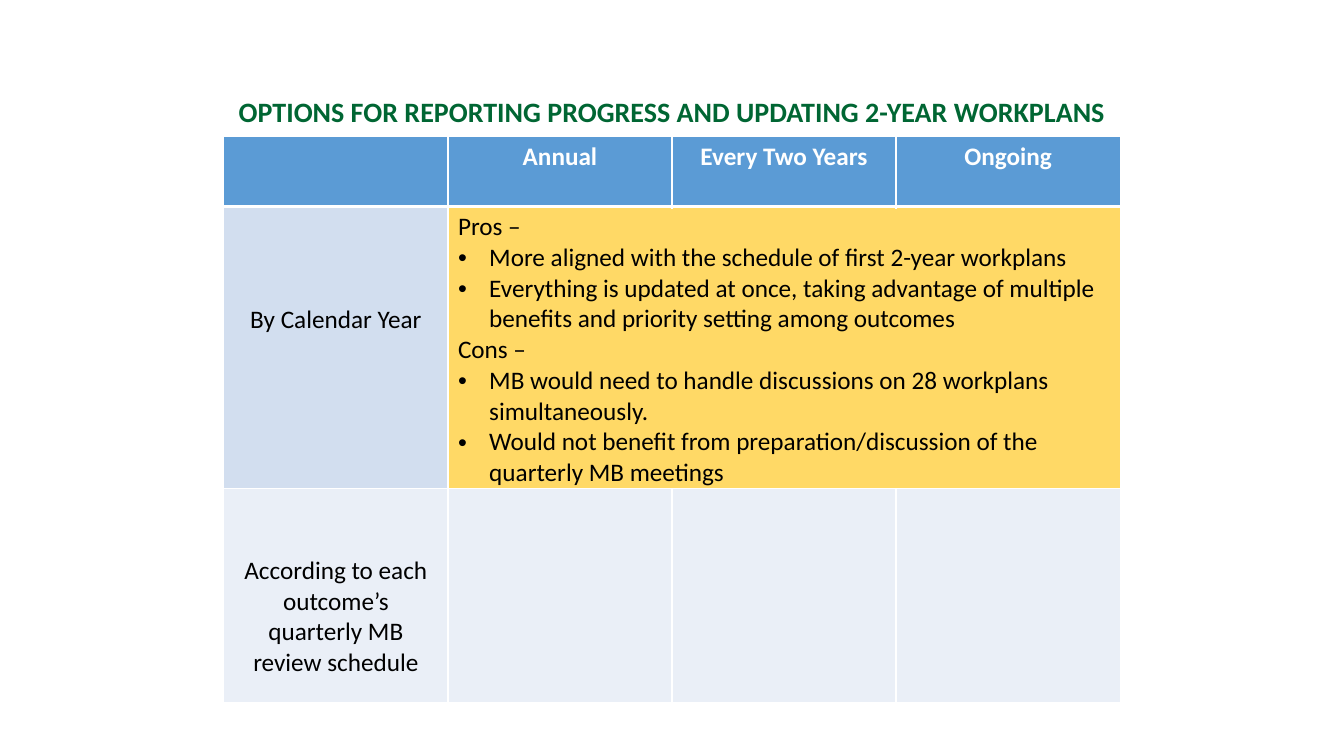
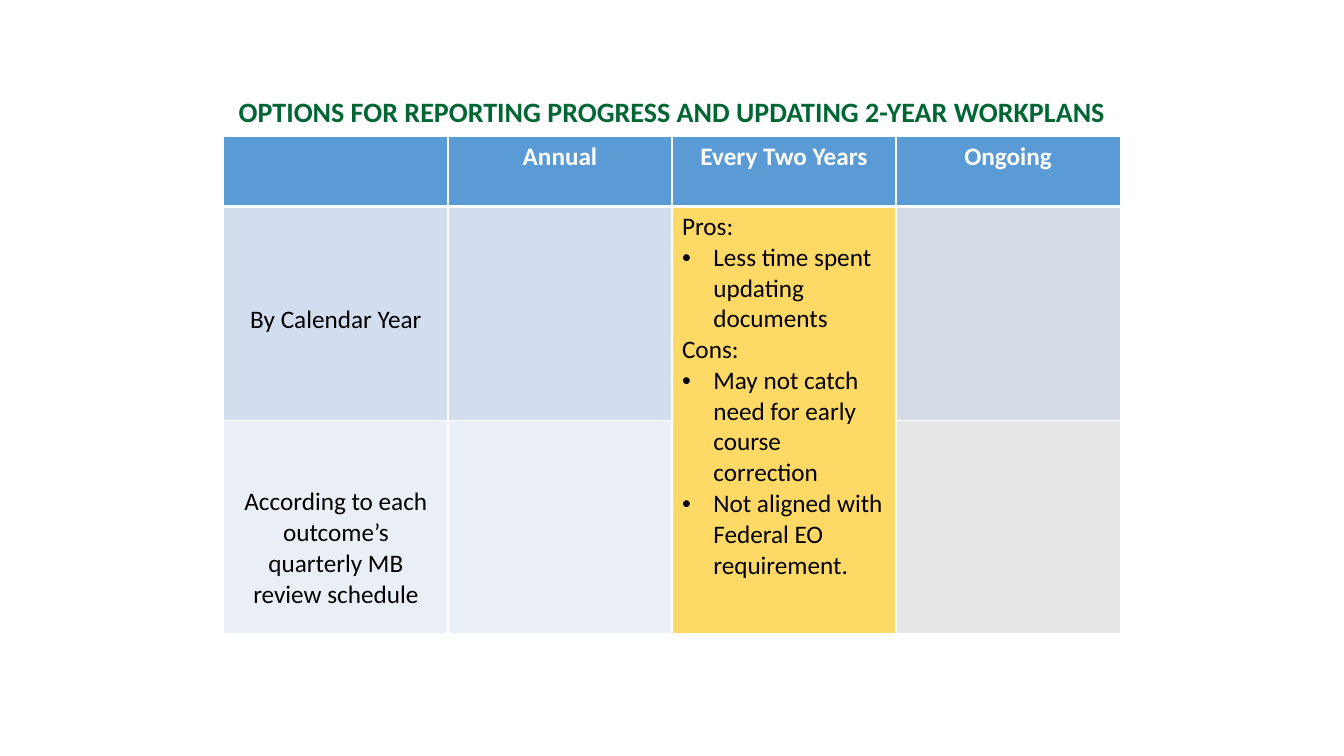
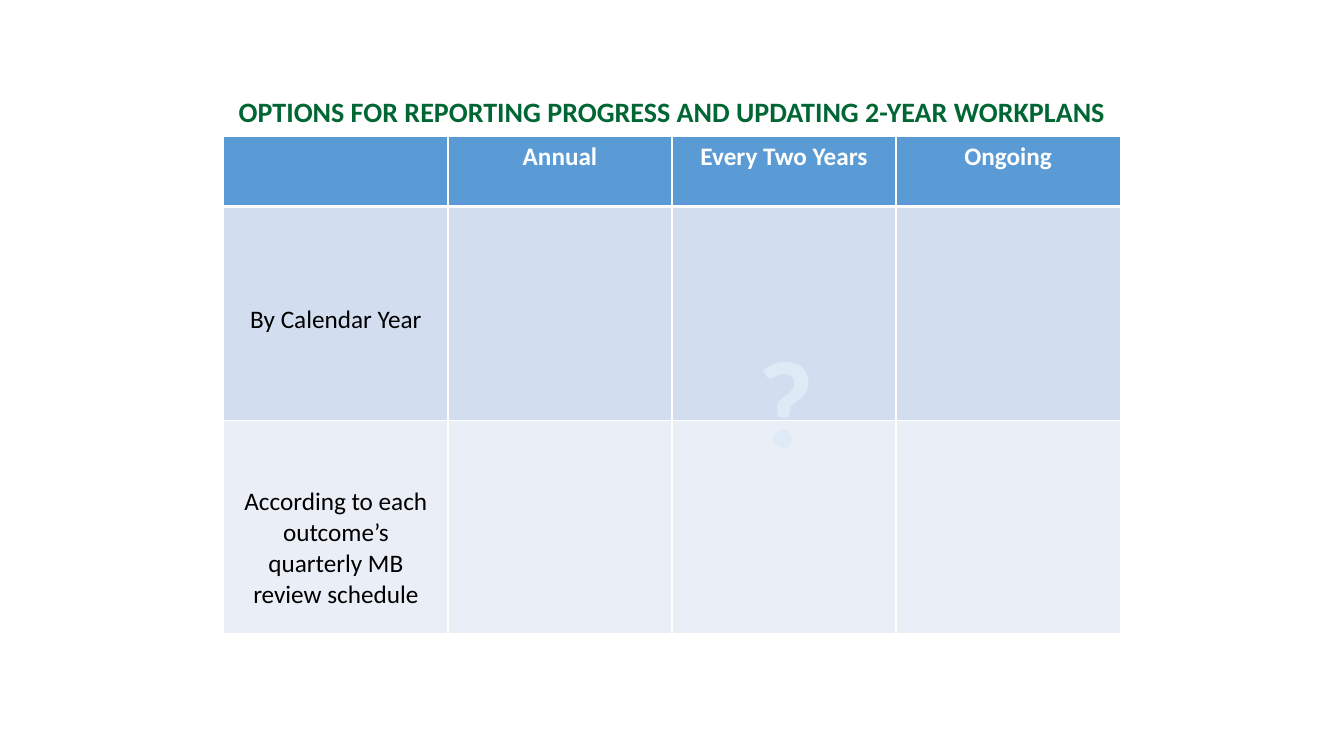
"""Build three slides comparing options for reporting progress on workplans."""
from dataclasses import dataclass

from lxml import etree
from pptx import Presentation
from pptx.dml.color import RGBColor
from pptx.enum import text
from pptx.oxml import ns
from pptx.util import Inches, Pt

FONT = "Calibri"
WHITE = RGBColor(0xFF, 0xFF, 0xFF)
BLACK = RGBColor(0x00, 0x00, 0x00)
GREEN = RGBColor(0x00, 0x66, 0x33)
BLUE = RGBColor(0x5B, 0x9B, 0xD5)
BAND_DARK = RGBColor(0xD2, 0xDE, 0xEF)
BAND_LIGHT = RGBColor(0xEA, 0xEF, 0xF7)
GOLD = RGBColor(0xFF, 0xD9, 0x66)
SLATE = RGBColor(0xD6, 0xDC, 0xE5)
GRAY = RGBColor(0xE7, 0xE6, 0xE6)
PALE_BLUE = RGBColor(0xDE, 0xEB, 0xF7)

LEFT, TABLE_TOP, WIDTH = 2.22, 1.35, 8.89
HEADER_HEIGHT, BODY_HEIGHT = 0.7, 2.12
BULLET_INDENT = 0.31
CENTER = text.PP_ALIGN.CENTER

TITLE = "OPTIONS FOR REPORTING PROGRESS AND UPDATING 2-YEAR WORKPLANS"
HEADERS = ("", "Annual", "Every Two Years", "Ongoing")


@dataclass(frozen=True)
class RowLabel:
    """First cell of a body row, with the space above its words."""
    words: str
    top: float
    band: RGBColor


@dataclass(frozen=True)
class Assessment:
    """Pros and cons in a merged block of cells."""
    first: tuple[int, int]
    last: tuple[int, int]
    mark: str
    pros: tuple[str, ...]
    cons: tuple[str, ...]


@dataclass(frozen=True)
class OptionsPage:
    """What differs from slide to slide."""
    assessment: Assessment | None = None
    calendar_height: float = BODY_HEIGHT
    ongoing_fills: tuple[RGBColor, RGBColor] = (BAND_DARK, BAND_LIGHT)
    question: str = ""


ROW_LABELS = (
    RowLabel("By Calendar Year", 0.97, BAND_DARK),
    RowLabel("According to each outcome’s quarterly MB review schedule", 0.66, BAND_LIGHT),
)

PAGES = (
    OptionsPage(
        Assessment(
            (1, 1), (1, 3), " –",
            ("More aligned with the schedule of first 2-year workplans",
             "Everything is updated at once, taking advantage of multiple "
             "benefits and priority setting among outcomes"),
            ("MB would need to handle discussions on 28 workplans simultaneously.",
             "Would not benefit from preparation/discussion of the quarterly MB meetings")),
        calendar_height=2.8),
    OptionsPage(
        Assessment(
            (1, 2), (2, 2), ":",
            ("Less time spent updating documents",),
            ("May not catch need for early course correction",
             "Not aligned with Federal EO requirement.")),
        ongoing_fills=(SLATE, GRAY)),
    OptionsPage(question="?"),
)


def add_span(para, words: str, size: float = 18, color: RGBColor = BLACK,
             bold: bool = False) -> None:
    """Add one formatted run."""
    span = para.add_run()
    span.text = words
    span.font.name = FONT
    span.font.size = Pt(size)
    span.font.bold = bold
    span.font.color.rgb = color


def set_bullet(para) -> None:
    """Give a paragraph a hanging bullet."""
    props = para._p.get_or_add_pPr()
    props.set("marL", str(Inches(BULLET_INDENT)))
    props.set("indent", str(-Inches(BULLET_INDENT)))
    etree.SubElement(props, ns.qn("a:buFont"), typeface="Arial")
    etree.SubElement(props, ns.qn("a:buChar"), char="•")


def style_cell(cell, fill: RGBColor, bottom: float = 1) -> None:
    """Draw white borders round a cell and fill it."""
    props = cell._tc.get_or_add_tcPr()
    for side, weight in (("L", 1), ("R", 1), ("T", 1), ("B", bottom)):
        line = etree.SubElement(props, ns.qn(f"a:ln{side}"), w=str(Pt(weight)))
        paint = etree.SubElement(line, ns.qn("a:solidFill"))
        etree.SubElement(paint, ns.qn("a:srgbClr"), val=str(WHITE))
    cell.fill.solid()
    cell.fill.fore_color.rgb = fill


def add_centered(cell, words: str, color: RGBColor, bold: bool) -> None:
    """Write centred words in a cell."""
    para = cell.text_frame.paragraphs[0]
    para.alignment = CENTER
    add_span(para, words, color=color, bold=bold)


def add_assessment(table, item: Assessment) -> None:
    """Merge a block of cells and list its pros and cons."""
    cell = table.cell(*item.first)
    cell.merge(table.cell(*item.last))
    cell.fill.fore_color.rgb = GOLD
    cell.margin_bottom = Inches(0)
    frame = cell.text_frame
    para = frame.paragraphs[0]
    for heading, points in (("Pros", item.pros), ("Cons", item.cons)):
        if para.runs:
            para = frame.add_paragraph()
        add_span(para, heading + item.mark)
        for point in points:
            para = frame.add_paragraph()
            set_bullet(para)
            add_span(para, point)


def add_title(page) -> None:
    """Place and format the title shared by all slides."""
    box = page.shapes.title
    box.left, box.top = Inches(LEFT), Inches(0.88)
    box.width, box.height = Inches(WIDTH), Inches(0.44)
    frame = box.text_frame
    frame.auto_size = text.MSO_AUTO_SIZE.NONE
    frame.vertical_anchor = text.MSO_ANCHOR.MIDDLE
    frame.paragraphs[0].alignment = CENTER
    add_span(frame.paragraphs[0], TITLE, 20, GREEN, True)


def add_options_table(page, content: OptionsPage) -> None:
    """Draw the grid of reporting options."""
    heights = (HEADER_HEIGHT, content.calendar_height, BODY_HEIGHT)
    table = page.shapes.add_table(
        len(heights), len(HEADERS), Inches(LEFT), Inches(TABLE_TOP),
        Inches(WIDTH), Inches(sum(heights))).table
    table.horz_banding = False
    for row, height in zip(table.rows, heights):
        row.height = Inches(height)
    for column, heading in enumerate(HEADERS):
        cell = table.cell(0, column)
        style_cell(cell, BLUE, bottom=3)
        if heading:
            add_centered(cell, heading, WHITE, True)
    for row, label in enumerate(ROW_LABELS, start=1):
        fills = (label.band,) * 3 + (content.ongoing_fills[row - 1],)
        for column, fill in enumerate(fills):
            style_cell(table.cell(row, column), fill)
        cell = table.cell(row, 0)
        cell.margin_top = Inches(label.top)
        add_centered(cell, label.words, BLACK, False)
    if content.assessment:
        add_assessment(table, content.assessment)


def add_question(page, words: str) -> None:
    """Put a large pale mark over the table."""
    box = page.shapes.add_textbox(Inches(6.68), Inches(3.17), Inches(2.24), Inches(1.58))
    frame = box.text_frame
    frame.word_wrap = True
    frame.auto_size = text.MSO_AUTO_SIZE.SHAPE_TO_FIT_TEXT
    frame.paragraphs[0].alignment = CENTER
    add_span(frame.paragraphs[0], words, 88, PALE_BLUE, True)


def main() -> None:
    """Build and save the deck."""
    deck = Presentation()
    deck.slide_width, deck.slide_height = Inches(13.33), Inches(7.5)
    for content in PAGES:
        page = deck.slides.add_slide(deck.slide_layouts.get_by_name("Title Only"))
        add_title(page)
        add_options_table(page, content)
        if content.question:
            add_question(page, content.question)
    deck.save("out.pptx")


if __name__ == "__main__":
    main()
